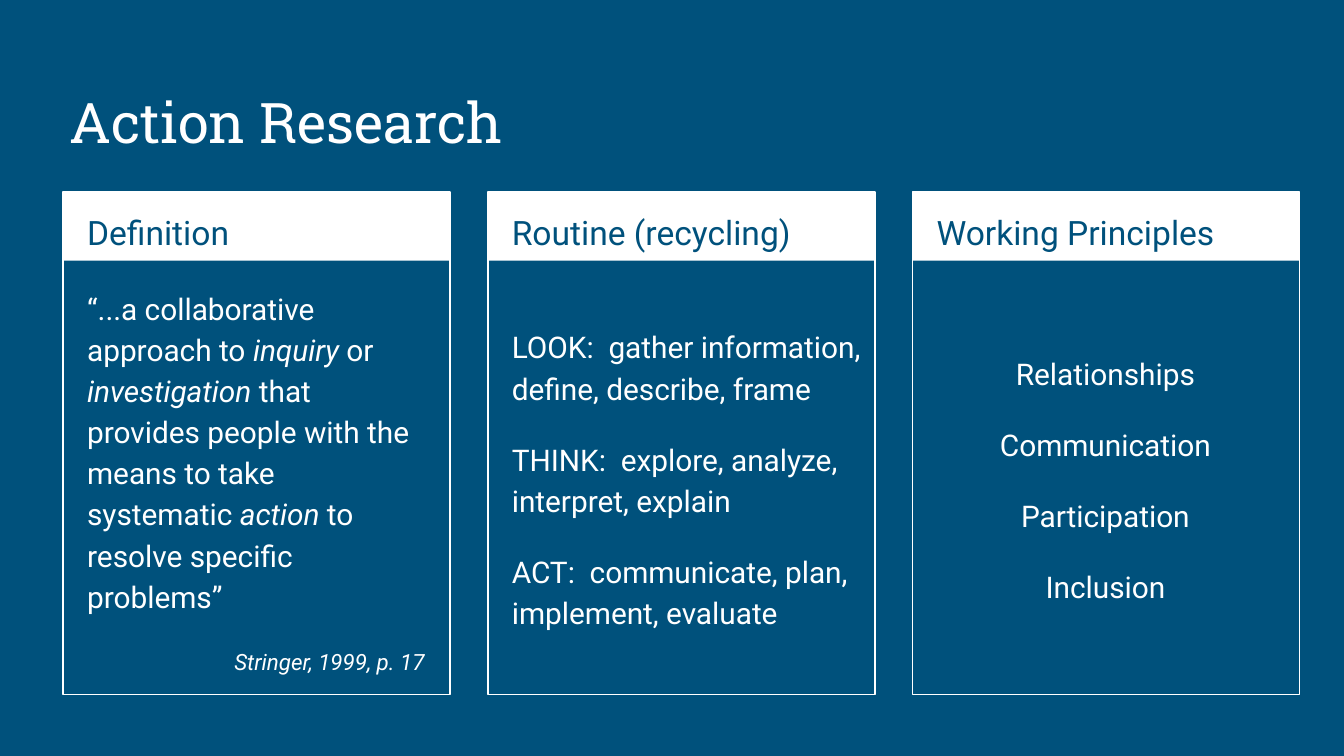
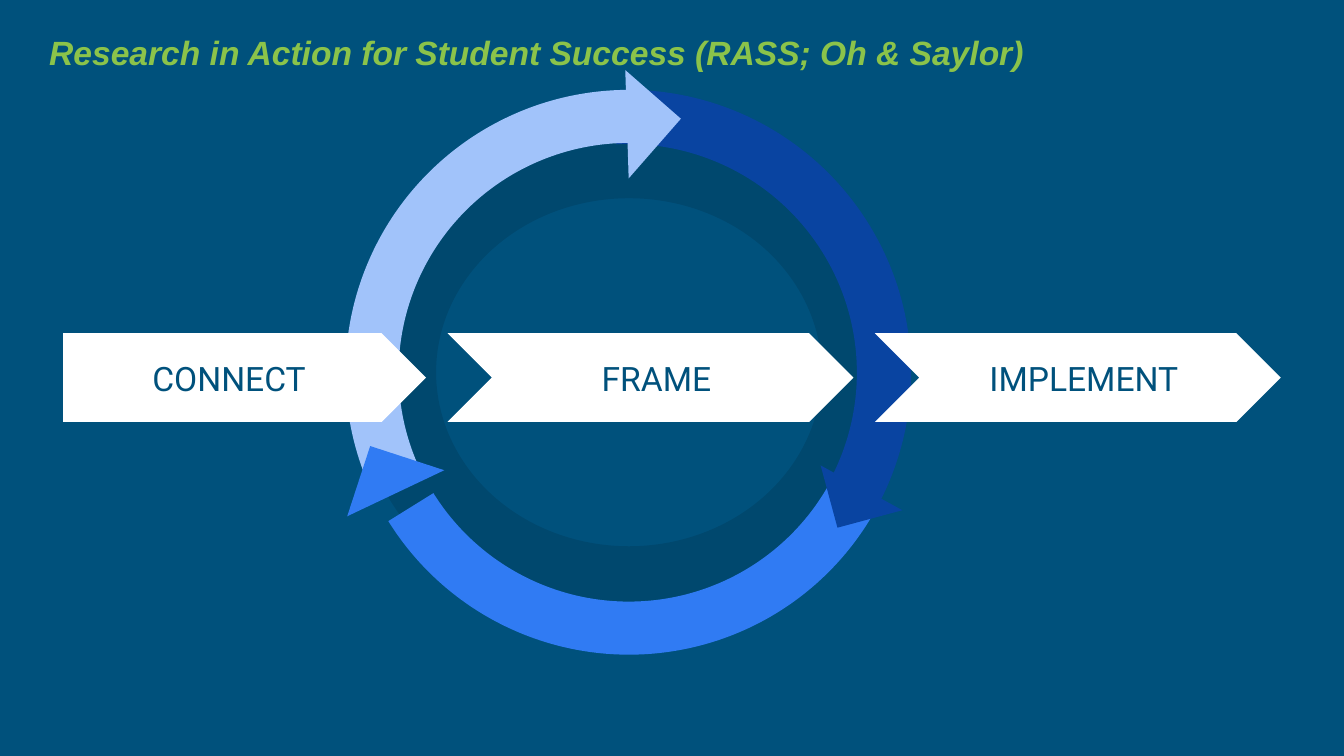
from dataclasses import dataclass
from typing import NamedTuple

from lxml.etree import SubElement
from pptx import Presentation
from pptx.dml.color import RGBColor as Color
from pptx.enum.shapes import MSO_SHAPE as Preset
from pptx.enum.text import MSO_ANCHOR as Anchor, PP_ALIGN as Align
from pptx.oxml.ns import qn
from pptx.util import Inches, Pt


@dataclass(frozen=True)
class Theme:
    """Colours, fonts and type sizes of the deck."""
    navy: str = "00517C"
    white: str = "FFFFFF"
    black: str = "000000"
    green: str = "8BC34A"
    dark_blue: str = "0944A1"
    pale_blue: str = "A1C3FA"
    bright_blue: str = "307BF3"
    body_font: str = "Roboto"
    title_font: str = "Roboto Slab"
    caption_font: str = "Arial"
    title_size: int = 30
    heading_size: int = 18
    body_size: int = 16
    source_size: int = 12


class Box(NamedTuple):
    """A rectangle in inches."""
    left: float
    top: float
    width: float
    height: float

    def inner(self, left, top, width, height):
        """Return a box placed relative to this one."""
        return Box(self.left + left, self.top + top, width, height)

    def lengths(self):
        """Return the rectangle as slide lengths."""
        return [Inches(value) for value in self]


THEME = Theme()
SLIDE_WIDTH = Inches(10)
SLIDE_HEIGHT = SLIDE_WIDTH * 9 // 16
CARD_PITCH = 3.16
STEP_PITCH = 3.18
NOTCH = 0.32


def add_slide(presentation):
    """Add a blank slide on the navy background."""
    slide = presentation.slides.add_slide(presentation.slide_layouts[6])
    slide.background.fill.solid()
    slide.background.fill.fore_color.rgb = Color.from_string(THEME.navy)
    return slide


def add_frame(slide, box, anchor=Anchor.TOP):
    """Add a wrapping text box and return its text frame."""
    frame = slide.shapes.add_textbox(*box.lengths()).text_frame
    frame.word_wrap = True
    frame.vertical_anchor = anchor
    frame.margin_left = frame.margin_right = Inches(0.1)
    frame.margin_top = frame.margin_bottom = Inches(0.1)
    return frame


def write(frame, text, size=THEME.body_size, color=THEME.white, font=THEME.body_font,
          bold=False, italic=False, align=Align.LEFT, spacing=1.0, before=0, after=0):
    """Write one paragraph, switching italics at each asterisk."""
    first = frame.paragraphs[0]
    paragraph = frame.add_paragraph() if first.runs else first
    paragraph.alignment = align
    paragraph.line_spacing = spacing
    paragraph.space_before, paragraph.space_after = Pt(before), Pt(after)
    for index, piece in enumerate(text.split("*")):
        run = paragraph.add_run()
        run.text = piece
        run.font.name, run.font.size = font, Pt(size)
        run.font.bold = bold
        run.font.italic = italic != (index % 2 == 1)
        run.font.color.rgb = Color.from_string(color)


def add_preset(slide, preset, box, fill=None, line=None, adjustments=(),
               rotation=0, flip=False, opacity=None):
    """Add a preset shape with the given fill, line and geometry."""
    shape = slide.shapes.add_shape(preset, *box.lengths())
    shape.shadow.inherit = False
    shape.rotation = rotation
    for index, value in enumerate(adjustments):
        shape.adjustments[index] = value
    if fill:
        shape.fill.solid()
        shape.fill.fore_color.rgb = Color.from_string(fill)
    else:
        shape.fill.background()
    if line:
        shape.line.color.rgb = Color.from_string(line)
        shape.line.width = Pt(0.75)
    else:
        shape.line.fill.background()
    if flip:
        shape.element.spPr.find(qn("a:xfrm")).set("flipH", "1")
    if opacity is not None:
        color = shape.element.spPr.find(qn("a:solidFill"))[0]
        SubElement(color, qn("a:alpha")).set("val", str(opacity * 1000))


def add_card(slide, box, heading, anchor=Anchor.MIDDLE, body_width=2.71):
    """Draw an outlined card with a heading band and return its body frame."""
    add_preset(slide, Preset.RECTANGLE, box.inner(0, 0, box.width, 0.51), fill=THEME.white)
    add_preset(slide, Preset.RECTANGLE, box, line=THEME.white)
    write(add_frame(slide, box.inner(0.08, 0, 2.73, 0.5)), heading,
          size=THEME.heading_size, color=THEME.navy, spacing=1.15)
    return add_frame(slide, box.inner(0.08, 0.59, body_width, 3.06), anchor)


def write_list(frame, items, align=Align.LEFT):
    """Write evenly spaced body paragraphs."""
    for index, item in enumerate(items):
        write(frame, item, align=align, spacing=1.15, before=16 if index else 0,
              after=16 if index == len(items) - 1 else 0)


def add_cycle(slide, box):
    """Draw the ring of three arc arrows."""
    add_preset(slide, Preset.DONUT, box.inner(0.06, 0.23, 4.1, 3.82),
               fill=THEME.black, adjustments=[0.161], opacity=11)

    def arc(fill, rotation, start, end, thickness=0.094, flip=True):
        """Draw one arc of the ring, with its angles in degrees."""
        add_preset(slide, Preset.BLOCK_ARC, box.inner(0, 0.04, 4.21, 4.2), fill=fill,
                   adjustments=[start * 0.6, end * 0.6, thickness],
                   rotation=rotation, flip=flip)

    def head(fill, rotation, *place):
        """Draw one arrowhead of the ring."""
        add_preset(slide, Preset.RIGHT_TRIANGLE, box.inner(*place), fill=fill, rotation=rotation)

    arc(THEME.dark_blue, 26.8, 240.24, 0.01, 0.096, flip=False)
    arc(THEME.pale_blue, 333.2, 239.14, 357.88)
    head(THEME.pale_blue, 221.2, 1.82, 0, 0.55, 0.59)
    arc(THEME.bright_blue, 206.8, 238.6, 358.38)
    head(THEME.dark_blue, 344.9, 3.59, 2.76, 0.5, 0.48)
    head(THEME.bright_blue, 108.1, 0.1, 2.75, 0.55, 0.58)


def add_steps(slide, box, labels):
    """Draw the row of step arrows with their labels."""
    for index, label in enumerate(labels):
        left = index * STEP_PITCH
        notch = NOTCH if index else 0
        preset = Preset.CHEVRON if index else Preset.PENTAGON
        add_preset(slide, preset, box.inner(left - notch, 0, 2.7 + notch, box.height),
                   fill=THEME.white, adjustments=[0.5])
        frame = add_frame(slide, box.inner(left, 0.16, 2.47, 0.34), Anchor.MIDDLE)
        write(frame, label, size=THEME.heading_size, color=THEME.navy, align=Align.CENTER)


def build_action_research(presentation):
    """Build the slide with three cards."""
    slide = add_slide(presentation)
    write(add_frame(slide, Box(0.42, 0.5, 9.15, 0.75), Anchor.BOTTOM), "Action Research",
          size=THEME.title_size, font=THEME.title_font)
    definition, routine, principles = [
        Box(0.47 + index * CARD_PITCH, 1.43, 2.88, 3.74) for index in range(3)]

    frame = add_card(slide, definition, "Definition", Anchor.TOP)
    write(frame, "“...a collaborative approach to *inquiry* or *investigation* that provides "
          "people with the means to take systematic *action* to resolve specific problems”",
          spacing=1.15)
    write(frame, "Stringer, 1999, p. 17", size=THEME.source_size, italic=True,
          align=Align.RIGHT, spacing=1.15, before=16, after=16)

    write_list(add_card(slide, routine, "Routine (recycling)", body_width=2.88), [
        "LOOK:  gather information, define, describe, frame",
        "THINK:  explore, analyze, interpret, explain",
        "ACT:  communicate, plan, implement, evaluate"])
    write_list(add_card(slide, principles, "Working Principles"),
               ["Relationships", "Communication", "Participation", "Inclusion"], Align.CENTER)


def build_student_success(presentation):
    """Build the slide with the cycle and its steps."""
    slide = add_slide(presentation)
    add_cycle(slide, Box(2.57, 0.63, 4.21, 4.24))
    add_steps(slide, Box(0.47, 2.48, 9.06, 0.66), ["CONNECT", "FRAME", "IMPLEMENT"])
    write(add_frame(slide, Box(0.25, 0.14, 7.54, 0.66)),
          "Research in Action for Student Success (RASS; Oh & Saylor) ",
          size=THEME.heading_size, color=THEME.green, font=THEME.caption_font,
          bold=True, italic=True, align=Align.RIGHT)


def main():
    """Build and save the presentation."""
    presentation = Presentation()
    presentation.slide_width, presentation.slide_height = SLIDE_WIDTH, SLIDE_HEIGHT
    build_action_research(presentation)
    build_student_success(presentation)
    presentation.save("out.pptx")


if __name__ == "__main__":
    main()
